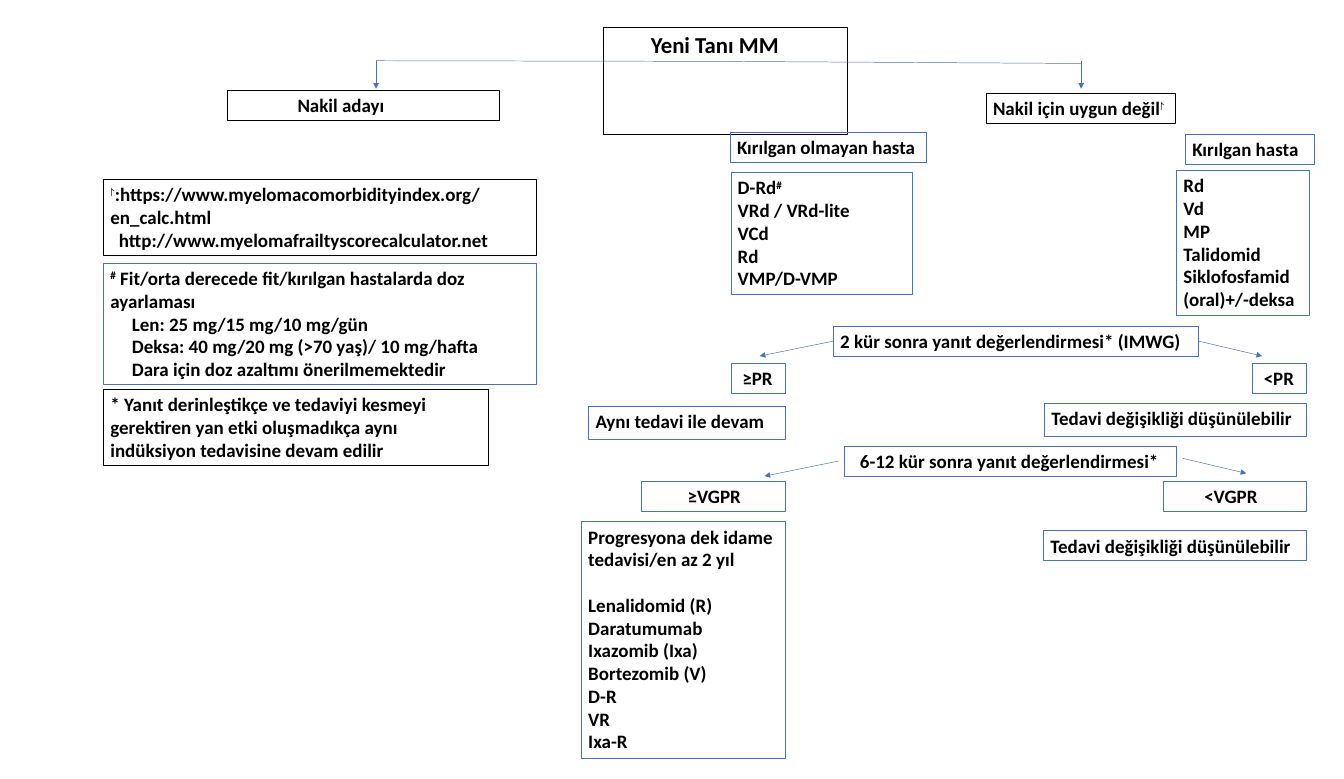
from lxml.etree import SubElement
from pptx import Presentation
from pptx.dml.color import RGBColor
from pptx.enum.shapes import MSO_CONNECTOR
from pptx.enum.text import MSO_ANCHOR, MSO_AUTO_SIZE, PP_ALIGN
from pptx.oxml.ns import qn
from pptx.util import Pt

BLACK = RGBColor(0x00, 0x00, 0x00)
BLUE = RGBColor(0x44, 0x72, 0xC4)
ROW = 31.7  # height of a one-line box
INSET = 7.2


def style(shape, lines, edge, pad, size):
    """Outline a box and fill it; text between ^ marks is superscript."""
    shape.line.color.rgb = edge
    shape.line.width = Pt(0.75)
    frame = shape.text_frame
    frame.word_wrap = True
    frame.auto_size = MSO_AUTO_SIZE.SHAPE_TO_FIT_TEXT
    frame.vertical_anchor = MSO_ANCHOR.TOP
    frame.margin_left = Pt(pad)
    for i, line in enumerate(lines):
        para = frame.add_paragraph() if i else frame.paragraphs[0]
        para.alignment = PP_ALIGN.LEFT
        for j, part in enumerate(line.split("^")):
            if not part:
                continue
            run = para.add_run()
            run.text = part
            font = run.font
            font.name, font.size, font.bold = "Calibri", Pt(size), True
            font.color.rgb = BLACK
            if j % 2:
                run._r.get_or_add_rPr().set("baseline", "30000")


def add_box(slide, x, y, w, h, *lines, edge=BLUE, pad=INSET):
    shape = slide.shapes.add_textbox(Pt(x), Pt(y), Pt(w), Pt(h))
    style(shape, lines, edge, pad, 20)
    return shape


def add_line(slide, x1, y1, x2, y2, arrow=True):
    line = slide.shapes.add_connector(
        MSO_CONNECTOR.STRAIGHT, Pt(x1), Pt(y1), Pt(x2), Pt(y2))
    line.line.color.rgb = BLUE
    line.line.width = Pt(0.5)
    if arrow:
        SubElement(line.line._get_or_add_ln(), qn("a:tailEnd"), type="triangle")
    SubElement(line._element.spPr, qn("a:effectLst"))
    return line


def add_head(slide, x, y):
    """Diagnosis and its two branches."""
    title = slide.shapes.title
    title.left, title.top = Pt(x + 396.7), Pt(y)
    title.width, title.height = Pt(257.8), Pt(36)
    style(title, ["Yeni Tanı MM"], BLACK, 50, 24)

    add_box(slide, x, y + 66.2, 286.6, ROW, "Nakil adayı", edge=BLACK, pad=74)
    add_box(slide, x + 800.6, y + 69.8, 199.4, ROW,
            "Nakil için uygun değil^⨡", edge=BLACK)

    # Branch lines from the diagnosis
    for end, drop in ((156.9, 35.3), (900.7, 38.2)):
        side = add_line(slide, x + 525.6, y + 36, x + end, y + drop, arrow=False)
        side.begin_connect(title, 2)
        add_line(slide, x + end, y + 35.3, x + end, y + 64.8)


def add_notes(slide, x, y):
    """Footnotes on the left."""
    links = add_box(slide, x, y, 456.5, 79.9,
                    "^⨡^:https://www.myelomacomorbidityindex.org/en_calc.html",
                    "http://www.myelomafrailtyscorecalculator.net", edge=BLACK)
    doses = add_box(slide, x, y + 88.5, 456.5, 128.2,
                    "^#^ Fit/orta derecede fit/kırılgan hastalarda doz ayarlaması",
                    "Len: 25 mg/15 mg/10 mg/gün",
                    "Deksa: 40 mg/20 mg (>70 yaş)/ 10 mg/hafta",
                    "Dara için doz azaltımı önerilmemektedir")
    add_box(slide, x, y + 221.7, 405.4, 79.9,
            "* Yanıt derinleştikçe ve tedaviyi kesmeyi gerektiren yan etki "
            "oluşmadıkça aynı indüksiyon tedavisine devam edilir", edge=BLACK)

    # Indented lines
    for note, indent in ((links, 9), (doses, 22.6)):
        for para in note.text_frame.paragraphs[1:]:
            para._p.get_or_add_pPr().set("marL", str(Pt(indent)))


def add_drugs(slide, x, y):
    """First-line regimens for fit and frail patients."""
    add_box(slide, x, y, 206.6, ROW, "Kırılgan olmayan hasta")
    add_box(slide, x + 480.2, y + 2.1, 135.4, ROW, "Kırılgan hasta")
    add_box(slide, x + 0.7, y + 42.5, 190.8, 128.2,
            "D-Rd^#", "VRd / VRd-lite", "VCd", "Rd", "VMP/D-VMP")
    add_box(slide, x + 470.9, y + 40.3, 139.7, 152.6,
            "Rd", "Vd", "MP", "Talidomid", "Siklofosfamid (oral)+/-deksa")


def add_early(slide, left, right, y):
    """Response after 2 cycles; results end at the left and right edges."""
    check = add_box(slide, left + 51.1, y, 385.2, ROW,
                    "2 kür sonra yanıt değerlendirmesi* (IMWG)")
    for edge, text in ((left, "≥PR"), (right, "<PR")):
        add_box(slide, edge - 56.9, y + 39.6, 56.9, ROW, text, pad=12)
    add_box(slide, left - 206.9, y + 84.9, 206.9, 34.6, "Aynı tedavi ile devam")
    add_box(slide, right - 276, y + 81.3, 276, 34.6,
            "Tedavi değişikliği düşünülebilir")
    for start, end, site in ((51.1, -26.6, 1), (436.3, 503.3, 3)):
        arrow = add_line(slide, left + start, y + 15.85, left + end, y + 31.6)
        arrow.begin_connect(check, site)


def add_late(slide, left, right, y):
    """Response after 6-12 cycles, with maintenance."""
    add_box(slide, left + 62.6, y, 349.9, ROW,
            "6-12 kür sonra yanıt değerlendirmesi*", pad=16.5)
    for edge, text, pad in ((left, "≥VGPR", 48.5), (right, "<VGPR", 43.5)):
        add_box(slide, edge - 151.2, y + 37, 151.2, ROW, text, pad=pad)
    care = add_box(slide, left - 214.6, y + 79.9, 214.6, 249.8,
                   "Progresyona dek idame tedavisi/en az 2 yıl",
                   "Lenalidomid (R)", "Daratumumab", "Ixazomib (Ixa)",
                   "Bortezomib (V)", "D-R", "VR", "Ixa-R")
    care.text_frame.paragraphs[1].space_before = Pt(24)
    add_box(slide, right - 277.2, y + 89.3, 277.2, ROW,
            "Tedavi değişikliği düşünülebilir")
    for start, end, drop in ((56.2, -21.6, 15.8), (419.8, 486.7, 12.9)):
        add_line(slide, left + start, y + drop, left + end, y + drop + 15.8)


def main():
    deck = Presentation()
    deck.slide_width, deck.slide_height = Pt(1417.7), Pt(822.2)
    slide = deck.slides.add_slide(deck.slide_layouts[5])
    add_head(slide, 239.8, 28.8)
    add_notes(slide, 109.4, 189.4)
    add_drugs(slide, 770.4, 139.7)
    add_early(slide, 828, 1378, 344.2)
    add_late(slide, 828, 1378, 470.9)
    deck.save("out.pptx")


if __name__ == "__main__":
    main()
